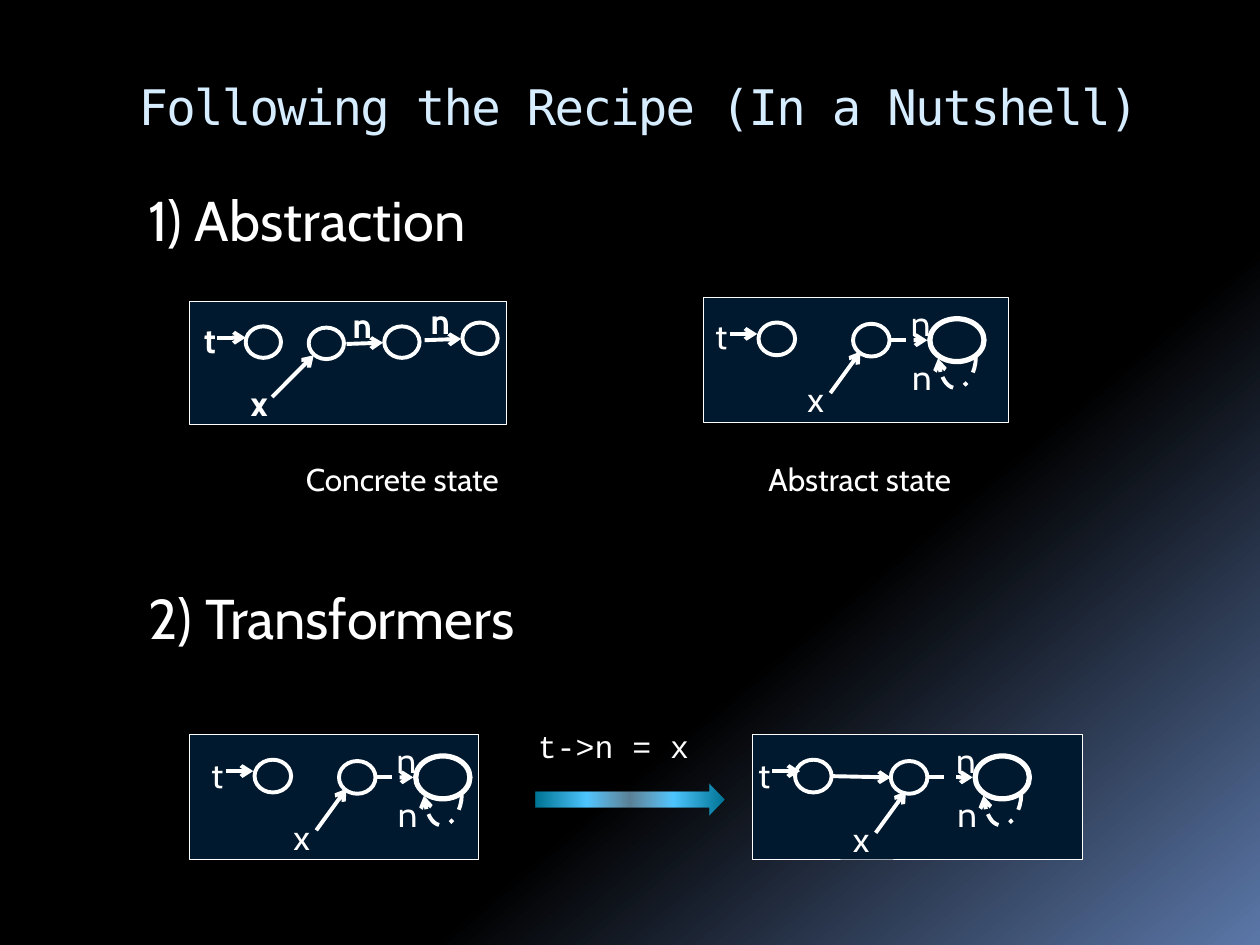
from dataclasses import dataclass

from lxml.etree import SubElement
from pptx import Presentation
from pptx.dml.color import RGBColor
from pptx.enum.dml import MSO_LINE_DASH_STYLE as Dash
from pptx.enum.shapes import MSO_CONNECTOR as Link, MSO_SHAPE as Shape
from pptx.enum.text import MSO_ANCHOR as Anchor, PP_ALIGN as Align
from pptx.oxml.ns import qn
from pptx.util import Inches, Pt

COLUMNS, ROWS = 100, 75
WIDTH, HEIGHT = Inches(10), Inches(7.5)


@dataclass(frozen=True)
class Theme:
    ink: str = "FFFFFF"
    title_ink: str = "D6ECFF"
    panel: str = "00192F"
    font: str = "Cabin"
    title_font: str = "DejaVu Sans Mono"
    code_font: str = "Courier New"
    title: int = 28
    heading: int = 32
    label: int = 20
    caption: int = 18
    hairline: float = 0.5
    stroke: float = 2.25
    bold_stroke: float = 3
    backdrop: tuple = ((0, "000000", 100), (65, "000000", 100), (100, "5B77A8", 100))
    arrow: tuple = ((0, "007494", 100), (27, "4FC6FF", 100), (50, "98D8FE", 58),
                    (73, "4FC6FF", 100), (100, "007494", 100))


THEME = Theme()
LABEL_WIDTHS = {"t": 2.3, "x": 4.2, "n": 5.2}


def column(count):
    return round(WIDTH * count / COLUMNS)


def row(count):
    return round(HEIGHT * count / ROWS)


def place(left, top, width, height):
    return column(left), row(top), column(width), row(height)


def paint_gradient(fill, element, stops, angle):
    fill.gradient()
    fill.gradient_angle = angle
    stop_list = next(element.iter(qn("a:gsLst")))
    for stop in list(stop_list):
        stop_list.remove(stop)
    for position, color, opacity in stops:
        stop = SubElement(stop_list, qn("a:gs"), pos=str(position * 1000))
        paint = SubElement(stop, qn("a:srgbClr"), val=color)
        if opacity < 100:
            SubElement(paint, qn("a:alpha"), val=str(opacity * 1000))


def write(box, text, size, font=THEME.font, color=THEME.ink, bold=False, wrap=True):
    frame = box.text_frame
    frame.text = text
    frame.word_wrap = wrap
    frame.vertical_anchor = Anchor.TOP
    para = frame.paragraphs[0]
    para.alignment = Align.LEFT
    span = para.runs[0]
    span.font.size, span.font.name, span.font.bold = Pt(size), font, bold
    span.font.color.rgb = RGBColor.from_string(color)
    return span


def add_text(shapes, box, text, size, **style):
    return write(shapes.add_textbox(*place(*box)), text, size, **style)


class Diagram:
    def __init__(self, page, box):
        self.left, self.top, width, height = box
        self.shapes = page.shapes.add_group_shape().shapes
        self.outline(Shape.RECTANGLE, (0, 0, width, height), THEME.hairline)

    def outline(self, kind, box, weight):
        left, top, width, height = box
        shape = self.shapes.add_shape(
            kind, *place(self.left + left, self.top + top, width, height))
        shape.shadow.inherit = False
        shape.fill.solid()
        shape.fill.fore_color.rgb = RGBColor.from_string(THEME.panel)
        shape.line.color.rgb = RGBColor.from_string(THEME.ink)
        shape.line.width = Pt(weight)

    def node(self, left, top, width=2.9, height=2.6, weight=THEME.stroke):
        self.outline(Shape.OVAL, (left, top, width, height), weight)

    def label(self, text, left, top, bold=False, filled=False):
        box = self.shapes.add_textbox(
            *place(self.left + left, self.top + top, LABEL_WIDTHS[text], 3.8))
        if filled:
            box.fill.solid()
            box.fill.fore_color.rgb = RGBColor.from_string(THEME.panel)
        write(box, text, THEME.label, bold=bold)

    def edge(self, start, end, dash=None, kind=Link.STRAIGHT):
        points = [(column(self.left + x), row(self.top + y)) for x, y in (start, end)]
        line = self.shapes.add_connector(kind, *points[0], *points[1])
        line.line.color.rgb = RGBColor.from_string(THEME.ink)
        line.line.width = Pt(THEME.stroke)
        if dash:
            line.line.dash_style = dash
        properties = line.element.spPr
        SubElement(properties.find(qn("a:ln")), qn("a:tailEnd"), type="arrow")
        SubElement(properties, qn("a:effectLst"))
        return line

    def loop(self, left, top, span=3, depth=2.5):
        middle, thickness = left + span / 2, 0.1
        line = self.edge((middle, top - span / 2), (middle + thickness, top + span / 2),
                         Dash.DASH_DOT, Link.CURVE)
        properties = line.element.spPr
        properties.find(qn("a:xfrm")).set("rot", str(90 * 60000))
        adjustments = properties.find(qn("a:prstGeom")).get_or_add_avLst()
        SubElement(adjustments, qn("a:gd"), name="adj1",
                   fmla=f"val {round(depth / thickness * 100000)}")


def concrete_state(page, box):
    diagram = Diagram(page, box)
    diagram.label("x", 3.9, 5.9, bold=True, filled=True)
    diagram.label("t", 0.2, 0.9, bold=True, filled=True)
    for left, top in ((4.5, 2), (9.5, 2.1), (15.5, 2), (21.7, 1.7)):
        diagram.node(left, top, 2.8, 2.5)
    diagram.edge((2.2, 2.9), (4.5, 2.9))
    diagram.edge((6.6, 7.6), (9.9, 4.3))
    for left, top in ((12.5, 3.4), (18.7, 3.1)):
        diagram.edge((left, top), (left + 2.9, top - 0.1))
        diagram.label("n", left - 0.5, top - 3.7, bold=True)


def abstract_state(page, box, t, first, second=11.9, summary=18, x=(7.3, 5.9),
                   t_filled=False, linked=False):
    diagram = Diagram(page, box)
    x_left, x_top = x
    diagram.label("t", *t, filled=t_filled)
    diagram.label("x", *x, filled=True)
    diagram.label("n", summary - 2.5, -0.2)
    diagram.node(first, 2)
    diagram.node(second, 2.1)
    diagram.node(summary, 1.7, 4.3, 3.4, THEME.bold_stroke)
    diagram.edge((t[0] + 2.1, 2.9), (t[0] + 4.3, 2.9))
    diagram.edge((x_left + 2.8, x_top + 1.7), (x_left + 5.2, x_top - 1.6))
    diagram.edge((second + 3, 3.4), (summary - 0.2, 3.4), Dash.DASH_DOT)
    diagram.loop(summary + 0.6, 4.8)
    diagram.label("n", summary - 2.4, 4.1)
    if linked:
        diagram.edge((first + 2.9, 3.3), (second, 3.4))


def page_title(page, box, text):
    title = page.shapes.title
    title.left, title.top, title.width, title.height = place(*box)
    span = write(title, text, THEME.title, THEME.title_font, THEME.title_ink)
    span.font._element.set("spc", "-100")


def abstraction(page, top):
    add_text(page.shapes, (10.8, top, 44.2, 6.4), "1) Abstraction", THEME.heading)
    concrete_state(page, (15, top + 9.7, 25.2, 9.8))
    abstract_state(page, (55.8, top + 9.4, 24.2, 9.9), (0, 0.9), 4.4)
    for left, width, text in ((23.3, 17.3, "Concrete state"), (60, 16.7, "Abstract state")):
        add_text(page.shapes, (left, top + 21.8, width, 4), text, THEME.caption, wrap=False)


def transformers(page, top):
    add_text(page.shapes, (10.8, top, 44.2, 6.4), "2) Transformers", THEME.heading)
    abstract_state(page, (15, top + 12.5, 23, 9.9), (0.8, 1), 5.2, t_filled=True)
    abstract_state(page, (59.7, top + 12.5, 26.2, 9.9), (-0.5, 1), 3.4, 11, 17.7,
                   (7, 6.1), linked=True)
    add_text(page.shapes, (41.7, top + 11.4, 14.1, 4), "t->n = x", THEME.caption,
             font=THEME.code_font, wrap=False)
    arrow = page.shapes.add_shape(Shape.RIGHT_ARROW, *place(42.5, top + 16.4, 15, 2.5))
    arrow.shadow.inherit = False
    arrow.line.fill.background()
    paint_gradient(arrow.fill, arrow.element, THEME.arrow, 0)


def main():
    deck = Presentation()
    deck.slide_width, deck.slide_height = WIDTH, HEIGHT
    page = deck.slides.add_slide(deck.slide_layouts[5])
    paint_gradient(page.background.fill, page.element, THEME.backdrop, 310)
    page_title(page, (10, 5.6, 85, 10), "Following the Recipe (In a Nutshell)")
    abstraction(page, 14.2)
    transformers(page, 45.8)
    deck.save("out.pptx")


if __name__ == "__main__":
    main()
